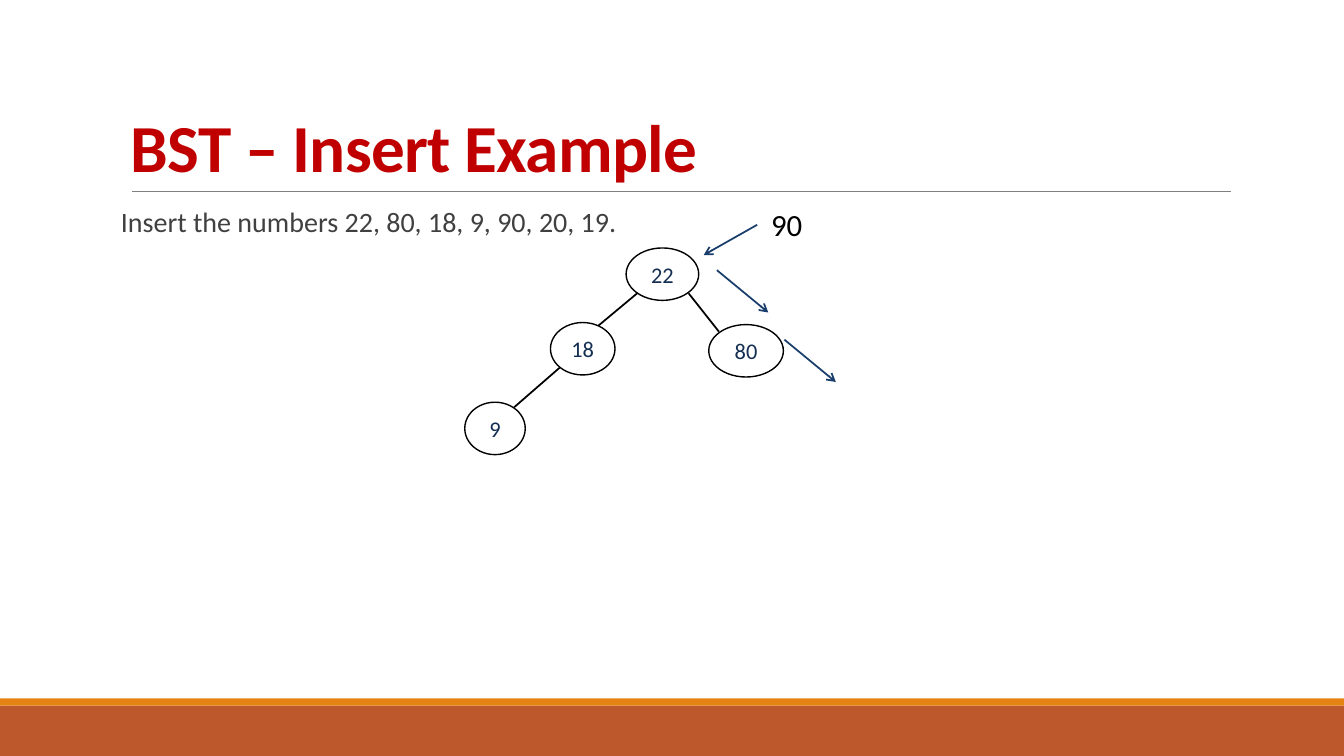
from dataclasses import dataclass

from lxml.etree import SubElement
from pptx import Presentation
from pptx.dml.color import RGBColor
from pptx.enum.shapes import MSO_CONNECTOR, MSO_SHAPE
from pptx.enum.text import MSO_ANCHOR, PP_ALIGN
from pptx.oxml.ns import qn
from pptx.util import Inches, Pt


@dataclass(frozen=True)
class Theme:
    font: str = "Calibri"
    title: str = "C00000"
    body: str = "404040"
    ink: str = "000000"
    paper: str = "FFFFFF"
    rule: str = "808080"
    key: str = "132E51"
    arrow: str = "1A3E6C"
    band: str = "BD582C"
    stripe: str = "E48312"
    title_size: int = 48
    body_size: int = 20
    insert_size: int = 22
    key_size: int = 16


THEME = Theme()
WIDTH, HEIGHT = 13.33, 7.5
NODE_HEIGHT = 0.52

# key, left, top and width, relative to the tree's box
NODES = [
    ("22", 1.6, 0.47, 0.72),
    ("80", 2.42, 1.23, 0.74),
    ("18", 0.85, 1.21, 0.64),
    ("9", 0, 2, 0.6),
]
# x1, y1, x2, y2, relative to the tree's box
EDGES = [
    (1.71, 0.92, 1.29, 1.27),
    (2.22, 0.92, 2.52, 1.3),
    (0.95, 1.65, 0.49, 2.05),
]
SEARCH_STEPS = [
    (2.9, 0.24, 2.37, 0.54),
    (2.5, 0.69, 3.01, 1.11),
    (3.17, 1.38, 3.68, 1.8),
]


def color(value):
    return RGBColor.from_string(value)


def style_paragraph(p, text, size, value):
    p.text = text
    p.font.name = THEME.font
    p.font.size = Pt(size)
    p.font.color.rgb = color(value)


def add_text(s, box, text, size, value):
    """Add a one-paragraph text box and return its frame and paragraph."""
    tf = s.shapes.add_textbox(*map(Inches, box)).text_frame
    tf.word_wrap = True
    p = tf.paragraphs[0]
    style_paragraph(p, text, size, value)
    return tf, p


def add_filled(s, kind, box, fill):
    sp = s.shapes.add_shape(kind, *map(Inches, box))
    sp.shadow.inherit = False
    sp.fill.solid()
    sp.fill.fore_color.rgb = color(fill)
    sp.line.fill.background()
    return sp


def add_line(s, ends, value, width, arrow=False):
    line = s.shapes.add_connector(MSO_CONNECTOR.STRAIGHT, *map(Inches, ends))
    line.line.color.rgb = color(value)
    line.line.width = Pt(width)
    if arrow:
        SubElement(line.line._get_or_add_ln(), qn("a:tailEnd"), type="arrow")
    SubElement(line._element.spPr, qn("a:effectLst"))


def add_footer(s, x, y, w, h):
    stripe = 0.07
    add_filled(s, MSO_SHAPE.RECTANGLE, (x, y + stripe, w, h - stripe), THEME.band)
    add_filled(s, MSO_SHAPE.RECTANGLE, (x, y, w, stripe), THEME.stripe)


def add_title(s, x, y, w, h):
    add_line(s, (x + 0.11, y + h, x + w + 0.01, y + h), THEME.rule, 0.5)
    tf, p = add_text(s, (x, y, w, h), "BST – Insert Example",
                     THEME.title_size, THEME.title)
    tf.vertical_anchor = MSO_ANCHOR.BOTTOM
    p.line_spacing = 0.85
    p.font.bold = True
    p.runs[0].font._element.set("spc", "-50")


def add_body(s, x, y, w, h):
    tf, p = add_text(s, (x, y, w, h),
                     "Insert the numbers 22, 80, 18, 9, 90, 20, 19.",
                     THEME.body_size, THEME.body)
    tf.margin_left = tf.margin_right = 0
    p.line_spacing = 0.9
    p.space_before, p.space_after = Pt(12), Pt(2)


def add_node(s, x, y, w, key):
    sp = add_filled(s, MSO_SHAPE.OVAL, (x, y, w, NODE_HEIGHT), THEME.paper)
    sp.line.color.rgb = color(THEME.ink)
    sp.line.width = Pt(1)
    tf = sp.text_frame
    tf.vertical_anchor = MSO_ANCHOR.MIDDLE
    p = tf.paragraphs[0]
    style_paragraph(p, key, THEME.key_size, THEME.key)
    p.alignment = PP_ALIGN.CENTER


def add_tree(s, x, y):
    """Draw the tree and the path that the inserted number follows."""
    def place(ends):
        x1, y1, x2, y2 = ends
        return x + x1, y + y1, x + x2, y + y2

    for edge in EDGES:
        add_line(s, place(edge), THEME.ink, 1.25)
    for key, left, top, width in NODES:
        add_node(s, x + left, y + top, width, key)
    tf, _ = add_text(s, (x + 2.94, y, 0.55, 0.47), "90",
                     THEME.insert_size, THEME.ink)
    tf.word_wrap = False
    for step in SEARCH_STEPS:
        add_line(s, place(step), THEME.arrow, 1.25, arrow=True)


def main():
    prs = Presentation()
    prs.slide_width, prs.slide_height = Inches(WIDTH), Inches(HEIGHT)
    s = prs.slides.add_slide(prs.slide_layouts[6])
    add_footer(s, 0, 6.93, WIDTH, HEIGHT - 6.93)
    add_title(s, 1.2, 0.31, 11, 1.59)
    add_body(s, 1.2, 2.02, 11, 4.4)
    add_tree(s, 4.61, 1.99)
    prs.save("out.pptx")


if __name__ == "__main__":
    main()
